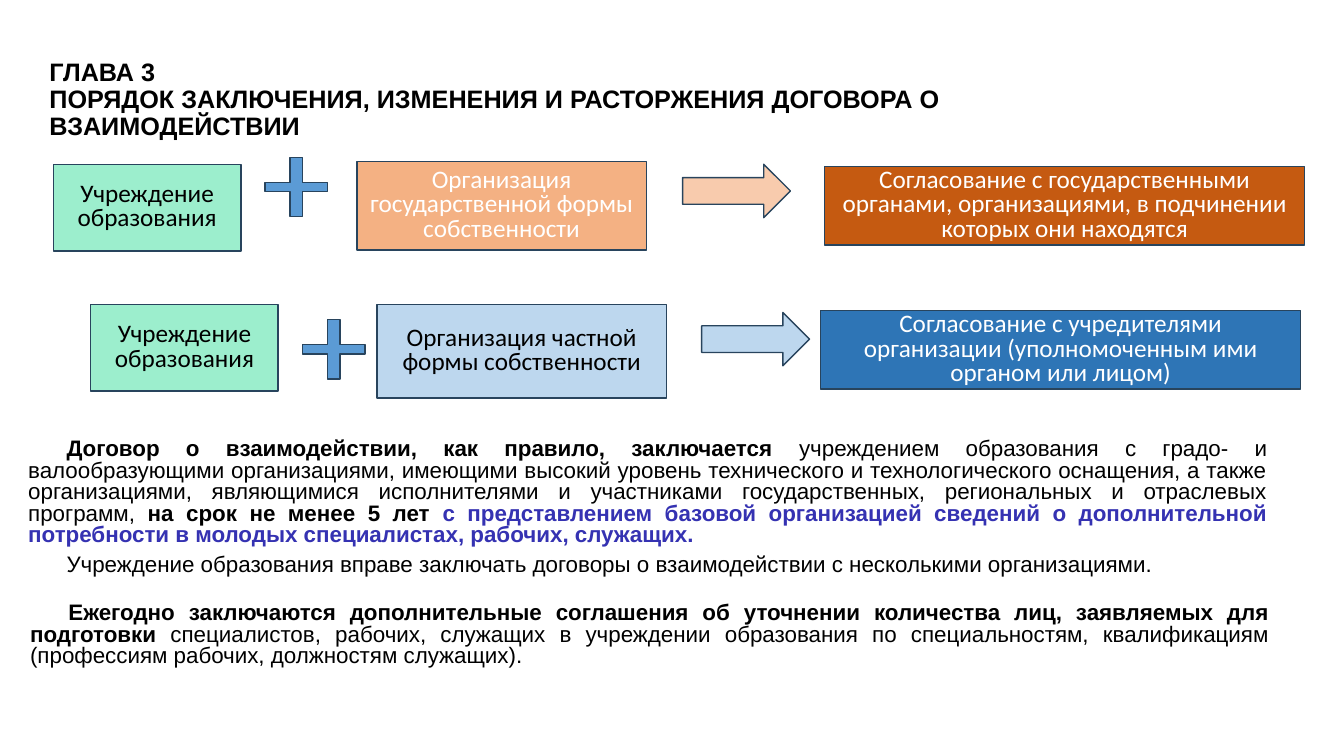
import copy
import pptx
import pptx.util
import pptx.dml.color
import pptx.oxml.ns
from pptx.enum.shapes import MSO_SHAPE as Form
from pptx.enum.text import MSO_ANCHOR as Anchor, MSO_AUTO_SIZE as Fit, PP_ALIGN as Align
from lxml import etree

# Content: runs are (text, bold, colour name)
TITLE = [("ГЛАВА 3\nПОРЯДОК ЗАКЛЮЧЕНИЯ, ИЗМЕНЕНИЯ И РАСТОРЖЕНИЯ ДОГОВОРА О ВЗАИМОДЕЙСТВИИ", True, "black")]
SCHOOL = "Учреждение образования"
# Each row: (kind, left, top, height, fill, text, text colour)
ROWS = [
    [("school", 53, 163, 86, "mint", SCHOOL, "black"),
     ("plus", 263, 156, 59, "blue", "", ""),
     ("firm", 354, 160, 88, "peach", "Организация государственной формы собственности", "white"),
     ("arrow", 677, 163, 53, "blush", "", ""),
     ("result", 818, 165, 78, "rust",
      "Согласование с государственными органами, организациями, в подчинении которых они находятся", "white")],
    [("school", 90, 302, 86, "mint", SCHOOL, "black"),
     ("plus", 300, 317, 59, "blue", "", ""),
     ("firm", 374, 302, 93, "sky", "Организация частной формы собственности", "black"),
     ("arrow", 696, 310, 53, "sky", "", ""),
     ("result", 814, 308, 78, "navy",
      "Согласование с учредителями организации (уполномоченным ими органом или лицом)", "white")],
]
TERMS = [
    [("Договор о взаимодействии, как правило, заключается ", True, "black"),
     ("учреждением образования с градо- и валообразующими организациями, имеющими высокий уровень "
      "технического и технологического оснащения, а также организациями, являющимися исполнителями "
      "и участниками государственных, региональных и отраслевых программ, ", False, "black"),
     ("на срок не менее 5 лет ", True, "black"),
     ("с представлением базовой организацией сведений о дополнительной потребности в молодых "
      "специалистах, рабочих, служащих.", True, "violet")],
    [("Учреждение образования вправе заключать договоры о взаимодействии с несколькими "
      "организациями.", False, "black")],
]
YEARLY = [
    [("Ежегодно заключаются дополнительные соглашения об уточнении количества лиц, заявляемых "
      "для подготовки ", True, "black"),
     ("специалистов, рабочих, служащих в учреждении образования по специальностям, квалификациям "
      "(профессиям рабочих, должностям служащих).", False, "black")],
]

# Theme and shape kinds
THEME = {
    "black": "000000", "white": "FFFFFF", "violet": "3532B2", "edge": "28445D",
    "mint": "9CEECD", "peach": "F4B183", "rust": "C55A11", "blue": "5B9BD5",
    "blush": "F8CBAD", "sky": "BDD7EE", "navy": "2E75B6",
    "head": 18, "label": 18, "body": 16,
}
KINDS = {  # preset, width
    "school": (Form.RECTANGLE, 186), "firm": (Form.RECTANGLE, 287),
    "result": (Form.RECTANGLE, 476), "plus": (Form.CROSS, 62),
    "arrow": (Form.RIGHT_ARROW, 107),
}
PX = 9144  # 100 px to the inch


def color(name):
    return pptx.dml.color.RGBColor.from_string(THEME[name])


def place(item, *box):
    item.left, item.top, item.width, item.height = (n * PX for n in box)


def write(frame, paras, size="body", face="Arial", align=Align.LEFT, lead=0.8,
          before=0, indent=0, anchor=Anchor.TOP, fit=Fit.NONE):
    frame.word_wrap, frame.auto_size, frame.vertical_anchor = True, fit, anchor
    for i, runs in enumerate(paras):
        par = frame.add_paragraph() if i else frame.paragraphs[0]
        par.alignment, par.line_spacing = align, lead
        par.space_before = pptx.util.Pt(before)
        props = par._p.get_or_add_pPr()
        props.set("marL", "0")
        props.set("indent", str(indent * PX))
        etree.SubElement(props, pptx.oxml.ns.qn("a:buNone"))
        for text, bold, tint in runs:
            for n, line in enumerate(text.split("\n")):
                if n:
                    par.add_line_break()
                run = par.add_run()
                run.text = line
                font = run.font
                font.name, font.size, font.bold = face, pptx.util.Pt(THEME[size]), bold
                font.color.rgb = color(tint)
        # Line breaks take the type size of their text
        for gap in par._p.findall(pptx.oxml.ns.qn("a:br")):
            gap.append(copy.deepcopy(run._r.rPr))


def draw(slide, kind, left, top, height, fill, text, tint):
    form, width = KINDS[kind]
    item = slide.shapes.add_shape(form, *(n * PX for n in (left, top, width, height)))
    item.shadow.inherit = False
    item.fill.solid()
    item.fill.fore_color.rgb = color(fill)
    item.line.color.rgb = color("edge")
    item.line.width = pptx.util.Pt(1)
    if kind == "plus":
        item.adjustments[0] = 0.42
    if text:
        write(item.text_frame, [[(text, False, tint)]], size="label", face="Calibri",
              align=Align.CENTER, anchor=Anchor.MIDDLE)


def main():
    deck = pptx.Presentation()
    deck.slide_width, deck.slide_height = 1333 * PX, 750 * PX
    slide = deck.slides.add_slide(deck.slide_layouts[1])

    # Title
    title = slide.shapes.title
    place(title, 39, 27, 915, 145)
    write(title.text_frame, [TITLE], size="head", lead=0.9, anchor=Anchor.MIDDLE)

    # Two approval schemes
    for row in ROWS:
        for part in row:
            draw(slide, *part)

    # Terms of the contract
    prose = dict(align=Align.JUSTIFY, before=6, indent=38, fit=Fit.SHAPE_TO_FIT_TEXT)
    terms = slide.placeholders[1]
    place(terms, 18, 431, 1249, 148)
    write(terms.text_frame, TERMS, **prose)
    yearly = slide.shapes.add_textbox(0, 0, 0, 0)
    place(yearly, 20, 594, 1249, 75)
    write(yearly.text_frame, YEARLY, **prose)

    deck.save("out.pptx")


if __name__ == "__main__":
    main()
